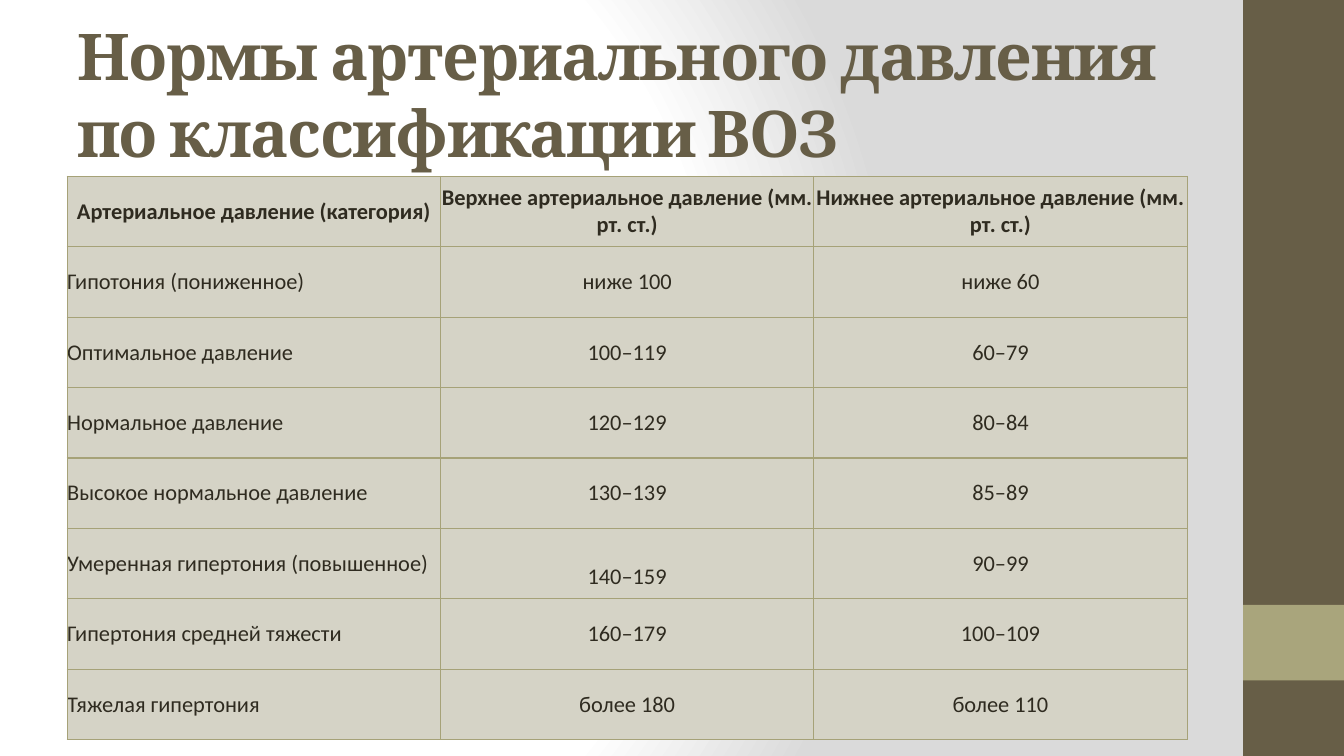
from dataclasses import dataclass

from lxml import etree
from pptx import Presentation, oxml
from pptx.dml.color import RGBColor
from pptx.enum import shapes, text
from pptx.oxml import ns
from pptx.util import Pt

BROWN, KHAKI, EDGE, CELL, INK = "675E47", "A9A57C", "A6A278", "D5D3C6", "2F2B20"
LEFT, MID = text.PP_ALIGN.LEFT, text.PP_ALIGN.CENTER


@dataclass
class Band:
    top: float
    high: float
    tint: str


@dataclass
class Norm:
    name: str
    upper: str
    lower: str
    drop: float = 0


BANDS = [Band(0, 540, BROWN), Band(432, 54, KHAKI)]
NORMS = [
    Norm("Артериальное давление (категория)",
         "Верхнее артериальное давление (мм. рт. ст.)",
         "Нижнее артериальное давление (мм. рт. ст.)"),
    Norm("Гипотония (пониженное)", "ниже 100", "ниже 60"),
    Norm("Оптимальное давление", "100–119", "60–79"),
    Norm("Нормальное давление", "120–129", "80–84"),
    Norm("Высокое нормальное давление", "130–139", "85–89"),
    Norm("Умеренная гипертония (повышенное)", "140–159", "90–99", drop=19.5),
    Norm("Гипертония средней тяжести", "160–179", "100–109"),
    Norm("Тяжелая гипертония", "более 180", "более 110"),
]


def color(tint: str) -> RGBColor:
    return RGBColor.from_string(tint)


def write(frame, words: str, *, size: float, font: str, tint: str,
          bold: bool = False, align=LEFT, space: int = 0) -> None:
    frame.word_wrap = True
    para = frame.paragraphs[0]
    para.alignment = align
    run = para.add_run()
    run.text = words
    run.font.size = Pt(size)
    run.font.name = font
    run.font.bold = bold
    run.font.color.rgb = color(tint)
    if space:
        run.font._element.set("spc", str(space))


def paint(slide) -> None:
    slide.background.fill.gradient()
    old = slide.element.xpath(".//p:bgPr/a:gradFill")[0]
    stops = "".join(
        f'<a:gs pos="{pos}000"><a:srgbClr val="{tint}"/></a:gs>'
        for pos, tint in ((0, "FFFFFF"), (75, "FFFFFF"), (100, "DADADA")))
    new = oxml.parse_xml(
        f'<a:gradFill {ns.nsdecls("a")} rotWithShape="1"><a:gsLst>{stops}</a:gsLst>'
        '<a:path path="circle"><a:fillToRect l="20000" t="50000" r="100000" b="50000"/>'
        '</a:path></a:gradFill>')
    old.getparent().replace(old, new)


def draw_band(slide, band: Band) -> None:
    box = slide.shapes.add_shape(shapes.MSO_SHAPE.RECTANGLE, Pt(888), Pt(band.top),
                                 Pt(72), Pt(band.high))
    box.shadow.inherit = False
    box.fill.solid()
    box.fill.fore_color.rgb = color(band.tint)
    box.line.fill.background()


def edge(cell) -> None:
    props = cell._tc.get_or_add_tcPr()
    for spot, side in enumerate(("lnL", "lnR", "lnT", "lnB")):
        line = etree.Element(ns.qn(f"a:{side}"), w=str(Pt(1)))
        fill = etree.SubElement(line, ns.qn("a:solidFill"))
        etree.SubElement(fill, ns.qn("a:srgbClr"), val=EDGE)
        props.insert(spot, line)


def draw_norm(table, row: int, norm: Norm) -> None:
    table.rows[row].height = Pt(50.3)
    for col, words in enumerate((norm.name, norm.upper, norm.lower)):
        cell = table.cell(row, col)
        cell.margin_left = cell.margin_right = cell.margin_bottom = 0
        cell.margin_top = Pt(norm.drop if col == 1 else 0)
        cell.vertical_anchor = text.MSO_ANCHOR.MIDDLE
        cell.fill.solid()
        cell.fill.fore_color.rgb = color(CELL)
        edge(cell)
        write(cell.text_frame, words, size=16, font="Calibri", tint=INK,
              bold=row == 0, align=MID if row == 0 or col else LEFT)


def main() -> None:
    deck = Presentation()
    deck.slide_width, deck.slide_height = Pt(960), Pt(540)
    slide = deck.slides.add_slide(deck.slide_layouts[6])
    paint(slide)
    for band in BANDS:
        draw_band(slide, band)

    title = slide.shapes.add_textbox(Pt(48), Pt(21.6), Pt(800), Pt(90)).text_frame
    title.vertical_anchor = text.MSO_ANCHOR.MIDDLE
    write(title, "Нормы артериального давления по классификации ВОЗ",
          size=46, font="Cambria", tint=BROWN, bold=True, space=-100)

    table = slide.shapes.add_table(len(NORMS), 3, Pt(48), Pt(126), Pt(800),
                                   Pt(50.3 * len(NORMS))).table
    for row, norm in enumerate(NORMS):
        draw_norm(table, row, norm)
    deck.save("out.pptx")


if __name__ == "__main__":
    main()
